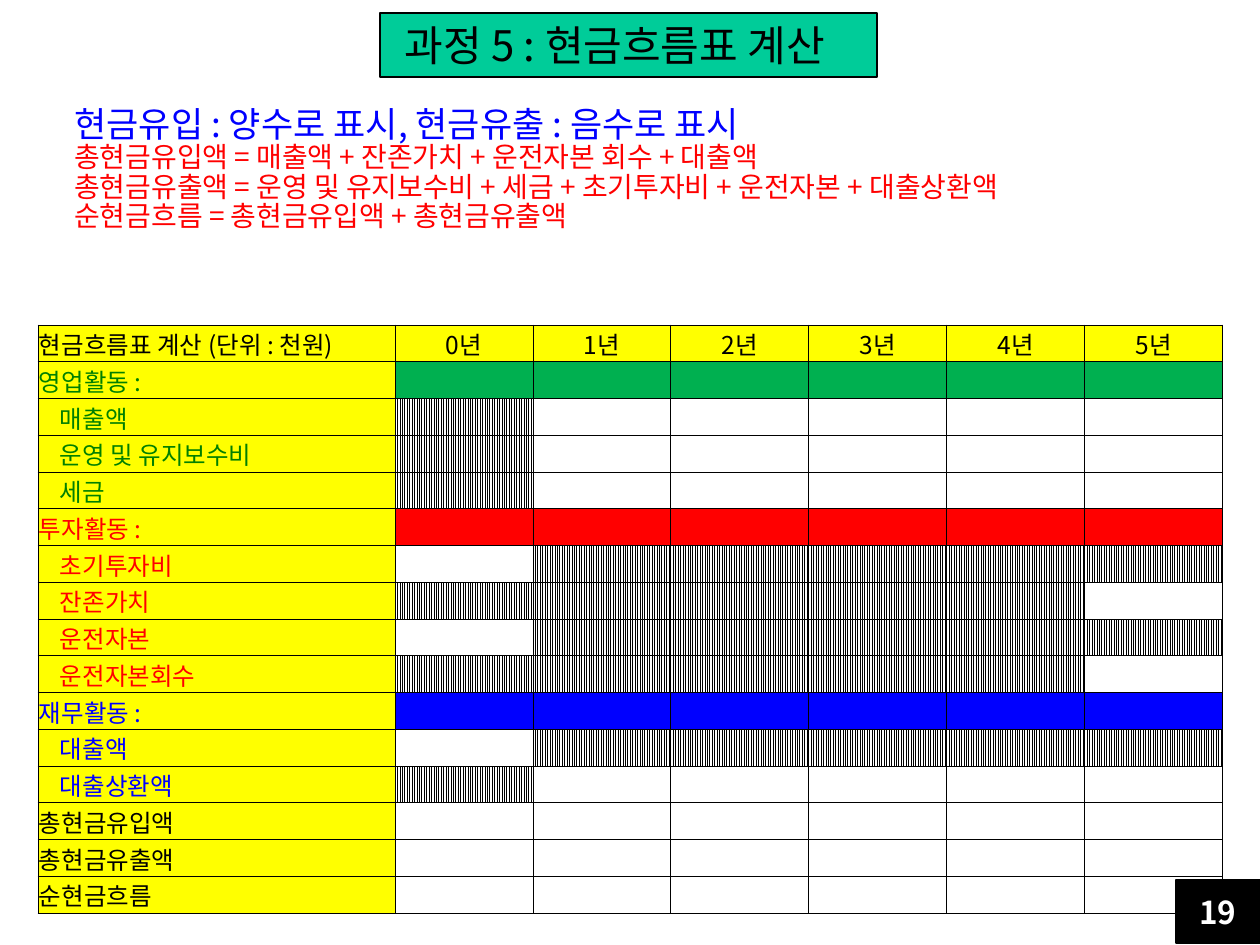
"""Builds the cash flow statement slide with its formulas and activity table."""
from lxml import etree
from pptx import Presentation
from pptx.dml.color import RGBColor
from pptx.enum.dml import MSO_PATTERN
from pptx.enum.shapes import MSO_SHAPE
from pptx.enum.text import MSO_ANCHOR, PP_ALIGN
from pptx.oxml.ns import qn
from pptx.util import Emu, Pt

PX = 914400 // 126
LEFT, CENTER = PP_ALIGN.LEFT, PP_ALIGN.CENTER
MIDDLE = MSO_ANCHOR.MIDDLE
RECTANGLE = MSO_SHAPE.RECTANGLE
LIGHT_VERTICAL = MSO_PATTERN.LIGHT_VERTICAL
THEME = {
    "font": "Noto Sans CJK KR",
    "black": "000000", "white": "FFFFFF", "yellow": "FFFF00", "teal": "00CC99",
    "green": "00B050", "dark_green": "008000", "red": "FF0000", "blue": "0000FF",
    "title": 24, "lead": 20, "formula": 16, "table": 14, "page": 18,
}


def color(name):
    return RGBColor.from_string(THEME[name])


def write(paragraph, text, size, ink="black", align=LEFT, bold=False, spacing=None):
    paragraph.alignment = align
    paragraph.line_spacing = spacing
    if not text:
        etree.SubElement(paragraph._p, qn("a:endParaRPr"), sz=str(THEME[size] * 100))
        return
    run = paragraph.add_run()
    run.text = text
    run.font.name = THEME["font"]
    run.font.size = Pt(THEME[size])
    run.font.bold = bold
    run.font.color.rgb = color(ink)
    etree.SubElement(run._r.get_or_add_rPr(), qn("a:ea"), typeface=THEME["font"])


presentation = Presentation()
presentation.slide_width = Emu(1260 * PX)
presentation.slide_height = Emu(945 * PX)
slide = presentation.slides.add_slide(presentation.slide_layouts[6])

years = [f"{year}년" for year in range(6)]
rows = [
    ("현금흐름표 계산 (단위 : 천원)", "black", "yellow", ""),
    ("영업활동 :", "dark_green", "green", ""),
    ("매출액", "dark_green", None, "x....."),
    ("운영 및 유지보수비", "dark_green", None, "x....."),
    ("세금", "dark_green", None, "x....."),
    ("투자활동 :", "red", "red", ""),
    ("초기투자비", "red", None, ".xxxxx"),
    ("잔존가치", "red", None, "xxxxx."),
    ("운전자본", "red", None, ".xxxxx"),
    ("운전자본회수", "red", None, "xxxxx."),
    ("재무활동 :", "blue", "blue", ""),
    ("대출액", "blue", None, ".xxxxx"),
    ("대출상환액", "blue", None, "x....."),
    ("총현금유입액", "black", None, "......"),
    ("총현금유출액", "black", None, "......"),
    ("순현금흐름", "black", None, "......"),
]
table = slide.shapes.add_table(
    len(rows), 1 + len(years), 38 * PX, 325 * PX, 1185 * PX, len(rows) * 34 * PX
).table
table.first_row = table.horz_banding = False
for index, column in enumerate(table.columns):
    column.width = Emu((138 if index else 357) * PX)

for row_index, (label, ink, band, pattern) in enumerate(rows):
    is_item = band is None and ink != "black"
    for column_index in range(1 + len(years)):
        cell = table.cell(row_index, column_index)
        cell.vertical_anchor = MIDDLE
        cell.margin_left = cell.margin_right = cell.margin_top = Emu(PX)
        cell.margin_bottom = 0
        for side in ("a:lnL", "a:lnR", "a:lnT", "a:lnB"):
            border = etree.SubElement(cell._tc.get_or_add_tcPr(), qn(side), w=str(Pt(0.5)))
            border_fill = etree.SubElement(border, qn("a:solidFill"))
            etree.SubElement(border_fill, qn("a:srgbClr"), val=THEME["black"])
        paragraph = cell.text_frame.paragraphs[0]
        if column_index == 0:
            write(paragraph, label, "table", ink)
            if is_item:
                cell.margin_left = Emu(22 * PX)
        else:
            heading = years[column_index - 1] if row_index == 0 else ""
            write(paragraph, heading, "table", align=CENTER)
        if column_index == 0 or band:
            cell.fill.solid()
            cell.fill.fore_color.rgb = color(band if column_index else "yellow")
        elif pattern[column_index - 1] == "x":
            cell.fill.patterned()
            cell.fill.pattern = LIGHT_VERTICAL
            cell.fill.fore_color.rgb = color("black")
            cell.fill.back_color.rgb = color("white")
        else:
            cell.fill.background()

formulas = [
    ("현금유입 : 양수로 표시, 현금유출 : 음수로 표시", "lead", "blue"),
    ("총현금유입액 = 매출액 + 잔존가치 + 운전자본 회수 + 대출액", "formula", "red"),
    ("총현금유출액 = 운영 및 유지보수비 + 세금 + 초기투자비 + 운전자본 + 대출상환액", "formula", "red"),
    ("순현금흐름 = 총현금유입액 + 총현금유출액", "formula", "red"),
]
frame = slide.shapes.add_textbox(62 * PX, 106 * PX, 1071 * PX, 162 * PX).text_frame
frame.word_wrap = True
frame.margin_top = Emu(2 * PX)
for index, (text, size, ink) in enumerate(formulas):
    paragraph = frame.add_paragraph() if index else frame.paragraphs[0]
    write(paragraph, text, size, ink, spacing=0.87)

boxes = [
    ("과정 5 : 현금흐름표 계산", (380, 13, 497, 64), "teal", "title", "black", False, 40),
    ("19", (1176, 880, 84, 63), "black", "page", "white", True, 13),
]
for text, bounds, fill, size, ink, bold, right_margin in boxes:
    shape = slide.shapes.add_shape(RECTANGLE, *(value * PX for value in bounds))
    shape.shadow.inherit = False
    shape.fill.solid()
    shape.fill.fore_color.rgb = color(fill)
    shape.line.color.rgb = color("black")
    shape.line.width = Pt(0.75)
    frame = shape.text_frame
    frame.word_wrap = False
    frame.vertical_anchor = MIDDLE
    frame.margin_right = Emu(right_margin * PX)
    write(frame.paragraphs[0], text, size, ink, CENTER, bold)

presentation.save("out.pptx")
